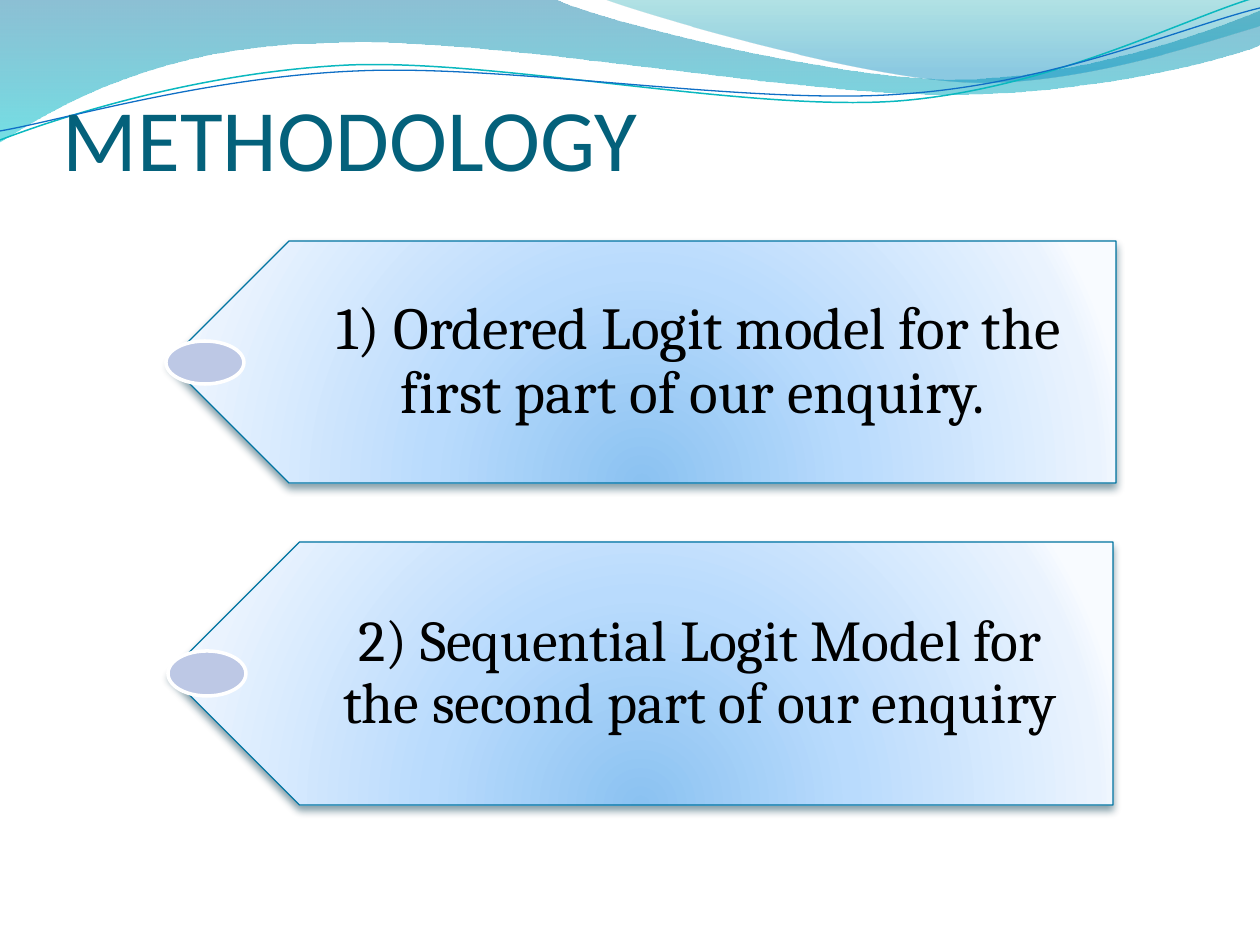
from lxml import etree
from pptx import Presentation
from pptx.dml.color import RGBColor
from pptx.enum.shapes import MSO_SHAPE
from pptx.enum.text import MSO_ANCHOR, PP_ALIGN
from pptx.oxml import parse_xml
from pptx.oxml.ns import qn
from pptx.util import Pt

PENTAGON, OVAL = MSO_SHAPE.PENTAGON, MSO_SHAPE.OVAL
MIDDLE, BOTTOM, CENTER = MSO_ANCHOR.MIDDLE, MSO_ANCHOR.BOTTOM, PP_ALIGN.CENTER
DRAWING = "http://schemas.openxmlformats.org/drawingml/2006/main"
PX = 914400 / 126
COLORS = {
    "title": "04617B", "text": "000000", "edge": "0074A1",
    "dot": "BDC8E5", "dot_edge": "FFFFFF", "shadow": "00374C",
}


def curve(start, segments, closed):
    """Draw a freeform; a segment is one line end or three Bezier points."""
    builder = page.shapes.build_freeform(*start, scale=PX)
    builder.add_line_segments([point for segment in segments for point in segment],
                              close=closed)
    shape = builder.convert_to_shape()
    shape.shadow.inherit = False
    lines = iter(list(shape._element.spPr.iter(qn("a:lnTo"))))
    for segment in segments:
        parts = [next(lines) for _ in segment]
        if len(parts) == 3:
            bezier = etree.Element(qn("a:cubicBezTo"))
            parts[0].addprevious(bezier)
            for part in parts:
                bezier.append(part[0])
                part.getparent().remove(part)
    return shape


def gradient(shape, stops, direction):
    """Fill with (percent, color, opacity percent) stops."""
    shape.fill.background()
    marks = ""
    for pos, color, opacity in stops:
        alpha = f'<a:alpha val="{opacity * 1000}"/>' if opacity < 100 else ""
        marks += (f'<a:gs pos="{pos * 1000}"><a:srgbClr val="{color}">'
                  f'{alpha}</a:srgbClr></a:gs>')
    fill = parse_xml(f'<a:gradFill xmlns:a="{DRAWING}" rotWithShape="1">'
                     f'<a:gsLst>{marks}</a:gsLst>{direction}</a:gradFill>')
    properties = shape._element.spPr
    properties.replace(properties.find(qn("a:noFill")), fill)


deck = Presentation()
deck.slide_width, deck.slide_height = round(1260 * PX), round(945 * PX)
page = deck.slides.add_slide(deck.slide_layouts[6])

# Header waves
waves = [
    ((0, 0), [
        [(554, -1)],
        [(600, 21), (837, 79), (955, 79)],
        [(1074, 79), (1207, 33), (1260, 11)],
        [(1261, 45)],
        [(1239, 55), (1096, 96), (940, 94)],
        [(784, 94), (481, 35), (324, 43)],
        [(163, 45), (58, 105), (-1, 142)],
        [(0, 0)],
    ], [(0, "0074A1", 45), (100, "00C6CF", 55)]),
    ((603, -1), [
        [(641, 14), (859, 78), (969, 82)],
        [(1079, 86), (1211, 40), (1260, 26)],
        [(1260, 0)],
        [(603, -1)],
    ], [(0, "00A1A9", 30), (80, "008BBF", 45)]),
]
for start, segments, stops in waves:
    wave = curve(start, segments, True)
    gradient(wave, stops, '<a:lin ang="5400000" scaled="0"/>')
    wave.line.fill.background()

# Thin header lines
strands = [
    ((0, 140), [
        [(60, 117), (199, 72), (349, 65)],
        [(498, 59), (747, 112), (898, 101)],
        [(1050, 89), (1182, 19), (1257, -3)],
    ], "0AB8BF", 0.85),
    ((0, 131), [
        [(59, 121), (207, 77), (357, 71)],
        [(508, 64), (752, 106), (903, 94)],
        [(1053, 84), (1186, 26), (1260, 8)],
    ], "0F6FC6", 0.75),
]
for start, segments, color, width in strands:
    strand = curve(start, segments, False)
    strand.fill.background()
    strand.line.color.rgb = RGBColor.from_string(color)
    strand.line.width = Pt(width)

# Text boxes: text, left, top, width, height, insets, anchor, align, spacing, size, font, color
tag_insets = (87, 18, 33, 18)
title = ("METHODOLOGY", 63, 32, 1134, 157, (0, 6, 0, 0), BOTTOM, None, None,
         50, "Calibri", "title")
first = ("1) Ordered Logit model for the first part of our enquiry. ", 228, 241, 887, 242,
         tag_insets, MIDDLE, CENTER, 0.9, 34, "Cambria", "text")
second = ("2) Sequential Logit Model for the second part of our enquiry", 233, 542, 880, 263,
          tag_insets, MIDDLE, CENTER, 0.9, 33, "Cambria", "text")

# Each label with its tag and dot (left, top, width, height)
rows = [
    (title, None, None),
    (first, (168, 241, 948, 242), (166, 341, 78, 43)),
    (second, (168, 542, 945, 263), (168, 651, 78, 45)),
]
for label, tag_frame, dot_frame in rows:
    # Tag pointing left
    if tag_frame:
        tag = page.shapes.add_shape(PENTAGON, *(round(v * PX) for v in tag_frame))
        tag.rotation = 180
        gradient(tag, [(0, "8BC2F1", 100), (43, "B9DBFD", 100),
                       (93, "EAF3FE", 100), (100, "F8FBFF", 100)],
                 '<a:path path="circle"><a:fillToRect l="50000" t="130000" '
                 'r="50000" b="-30000"/></a:path>')
        tag.line.color.rgb = RGBColor.from_string(COLORS["edge"])
        tag.line.width = Pt(0.75)
        tag.shadow.inherit = False
        effects = tag._element.spPr.find(qn("a:effectLst"))
        shadow = etree.SubElement(effects, qn("a:outerShdw"), blurRad=str(Pt(4.5)),
                                  dist=str(Pt(3)), dir="5400000", rotWithShape="0")
        tint = etree.SubElement(shadow, qn("a:srgbClr"), val=COLORS["shadow"])
        etree.SubElement(tint, qn("a:alpha"), val="48000")

    # Label
    text, left, top, width, height, insets, anchor, align, spacing, size, font, color = label
    box = page.shapes.add_textbox(*(round(v * PX) for v in (left, top, width, height)))
    frame = box.text_frame
    frame.word_wrap = True
    frame.vertical_anchor = anchor
    (frame.margin_left, frame.margin_top,
     frame.margin_right, frame.margin_bottom) = (round(v * PX) for v in insets)
    para = frame.paragraphs[0]
    para.text = text
    para.alignment = align
    para.line_spacing = spacing
    para.font.size = Pt(size)
    para.font.name = font
    para.font.color.rgb = RGBColor.from_string(COLORS[color])

    # Dot at the tip
    if dot_frame:
        dot = page.shapes.add_shape(OVAL, *(round(v * PX) for v in dot_frame))
        dot.shadow.inherit = False
        dot.fill.solid()
        dot.fill.fore_color.rgb = RGBColor.from_string(COLORS["dot"])
        dot.line.color.rgb = RGBColor.from_string(COLORS["dot_edge"])
        dot.line.width = Pt(2)

deck.save("out.pptx")
